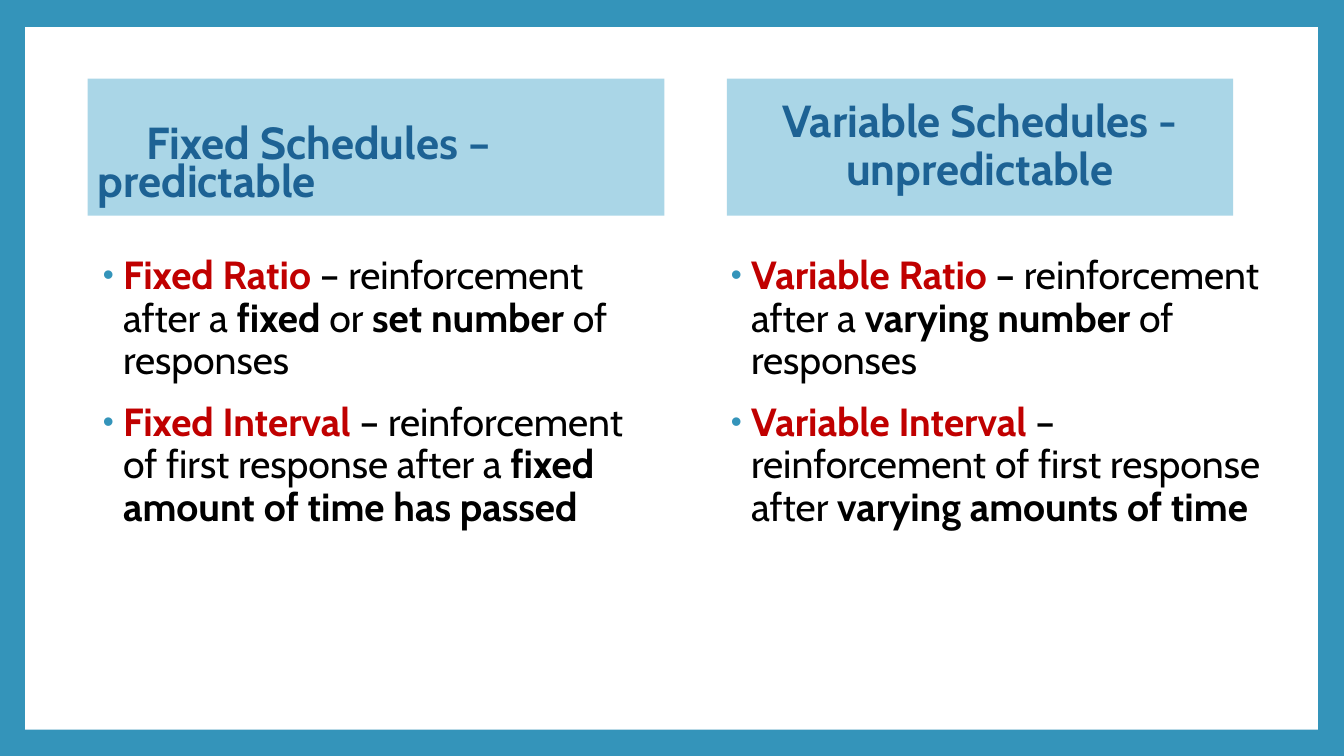
import pptx
import pptx.dml.color
import pptx.enum.shapes
import pptx.enum.text
import pptx.oxml
import pptx.oxml.ns
import pptx.util
from pptx.util import Inches

BLUE = "3494BA"
PALE = "AAD6E7"
NAVY = "1D6294"
RED = "C00000"
BLACK = "000000"
WHITE = "FFFFFF"

ALIGN = pptx.enum.text.PP_ALIGN
ANCHOR = pptx.enum.text.MSO_ANCHOR

RATIO_FIXED = [
    ("Fixed Ratio ", RED, True),
    ("– reinforcement after a ", BLACK, False),
    ("fixed ", BLACK, True),
    ("or ", BLACK, False),
    ("set number ", BLACK, True),
    ("of responses", BLACK, False),
]
INTERVAL_FIXED = [
    ("Fixed Interval ", RED, True),
    ("– reinforcement of first response after a ", BLACK, False),
    ("fixed amount of time has passed", BLACK, True),
]
RATIO_VARIABLE = [
    ("Variable Ratio ", RED, True),
    ("– ", BLACK, True),
    ("reinforcement after a ", BLACK, False),
    ("varying number ", BLACK, True),
    ("of responses", BLACK, False),
]
INTERVAL_VARIABLE = [
    ("Variable Interval ", RED, True),
    ("– reinforcement of first response after ", BLACK, False),
    ("varying amounts of time", BLACK, True),
]


def paint(color_format, value):
    color_format.rgb = pptx.dml.color.RGBColor.from_string(value)


def apply(target, formats):
    for name, value in formats.items():
        setattr(target, name, value)


class ScheduleSlide:
    font = "Cabin"
    heading_size = pptx.util.Pt(32)
    list_size = pptx.util.Pt(28)

    def __init__(self, deck):
        self.page = deck.slides.add_slide(deck.slide_layouts[4])
        title = self.page.shapes.title
        title.element.getparent().remove(title.element)

    def background(self, color):
        fill = self.page.background.fill
        fill.solid()
        paint(fill.fore_color, color)

    def panel(self, place, color):
        first = self.page.placeholders[1]
        panel = self.page.shapes.add_shape(
            pptx.enum.shapes.MSO_SHAPE.RECTANGLE, *map(Inches, place))
        panel.shadow.inherit = False
        panel.fill.solid()
        paint(panel.fill.fore_color, color)
        panel.line.fill.background()
        first.element.addprevious(panel.element)

    def place_box(self, number, place, frame_formats):
        box = self.page.placeholders[number]
        names = ("left", "top", "width", "height")
        apply(box, dict(zip(names, map(Inches, place))))
        apply(box.text_frame, {
            "word_wrap": True,
            "auto_size": pptx.enum.text.MSO_AUTO_SIZE.NONE,
            **frame_formats,
        })
        return box

    def add_span(self, para, text, size, color, bold):
        span = para.add_run()
        span.text = text
        apply(span.font, {"name": self.font, "size": size, "bold": bold})
        paint(span.font.color, color)

    def heading(self, number, place, lines, para_formats, first_indent=0, top=0.05):
        box = self.place_box(number, place, {
            "vertical_anchor": ANCHOR.MIDDLE, "margin_top": Inches(top)})
        box.fill.solid()
        paint(box.fill.fore_color, PALE)
        para = box.text_frame.paragraphs[0]
        apply(para, {"space_before": pptx.util.Pt(0), **para_formats})
        self.indent(para, 0, first_indent)
        for position, line in enumerate(lines):
            if position:
                para.add_line_break()
            self.add_span(para, line, self.heading_size, NAVY, True)

    def indent(self, para, left, first):
        properties = para._p.get_or_add_pPr()
        properties.set("marL", str(Inches(left)))
        properties.set("indent", str(Inches(first)))
        return properties

    def bullet(self, para):
        properties = self.indent(para, 0.25, -0.2)
        namespace = pptx.oxml.ns.nsdecls("a")
        for markup in (
            f'<a:buClr {namespace}><a:srgbClr val="{BLUE}"/></a:buClr>',
            f'<a:buSzPct {namespace} val="80000"/>',
            f'<a:buFont {namespace} typeface="Arial"/>',
            f'<a:buChar {namespace} char="•"/>',
        ):
            properties.append(pptx.oxml.parse_xml(markup))

    def bullet_list(self, number, place, items):
        box = self.place_box(number, place, {"vertical_anchor": ANCHOR.TOP})
        frame = box.text_frame
        for position, spans in enumerate(items):
            para = frame.add_paragraph() if position else frame.paragraphs[0]
            apply(para, {
                "alignment": ALIGN.LEFT,
                "line_spacing": 0.9,
                "space_before": pptx.util.Pt(14),
            })
            self.bullet(para)
            for text, color, bold in spans:
                self.add_span(para, text, self.list_size, color, bold)


def main():
    deck = pptx.Presentation()
    apply(deck, {"slide_width": Inches(13.33), "slide_height": Inches(7.5)})
    slide = ScheduleSlide(deck)
    slide.background(BLUE)
    slide.panel((0.25, 0.27, 12.82, 6.97), WHITE)
    slide.heading(1, (0.87, 0.78, 5.72, 1.36), ["Fixed Schedules –", "predictable"],
                  {"alignment": ALIGN.LEFT, "line_spacing": 0.7},
                  first_indent=0.48, top=0.45)
    slide.bullet_list(2, (0.87, 2.49, 5.72, 4.1), [RATIO_FIXED, INTERVAL_FIXED])
    slide.heading(3, (7.21, 0.78, 5.02, 1.36), ["Variable Schedules - unpredictable"],
                  {"alignment": ALIGN.CENTER, "line_spacing": 0.9})
    slide.bullet_list(4, (7.1, 2.49, 5.57, 4.47), [RATIO_VARIABLE, INTERVAL_VARIABLE])
    deck.save("out.pptx")


if __name__ == "__main__":
    main()
